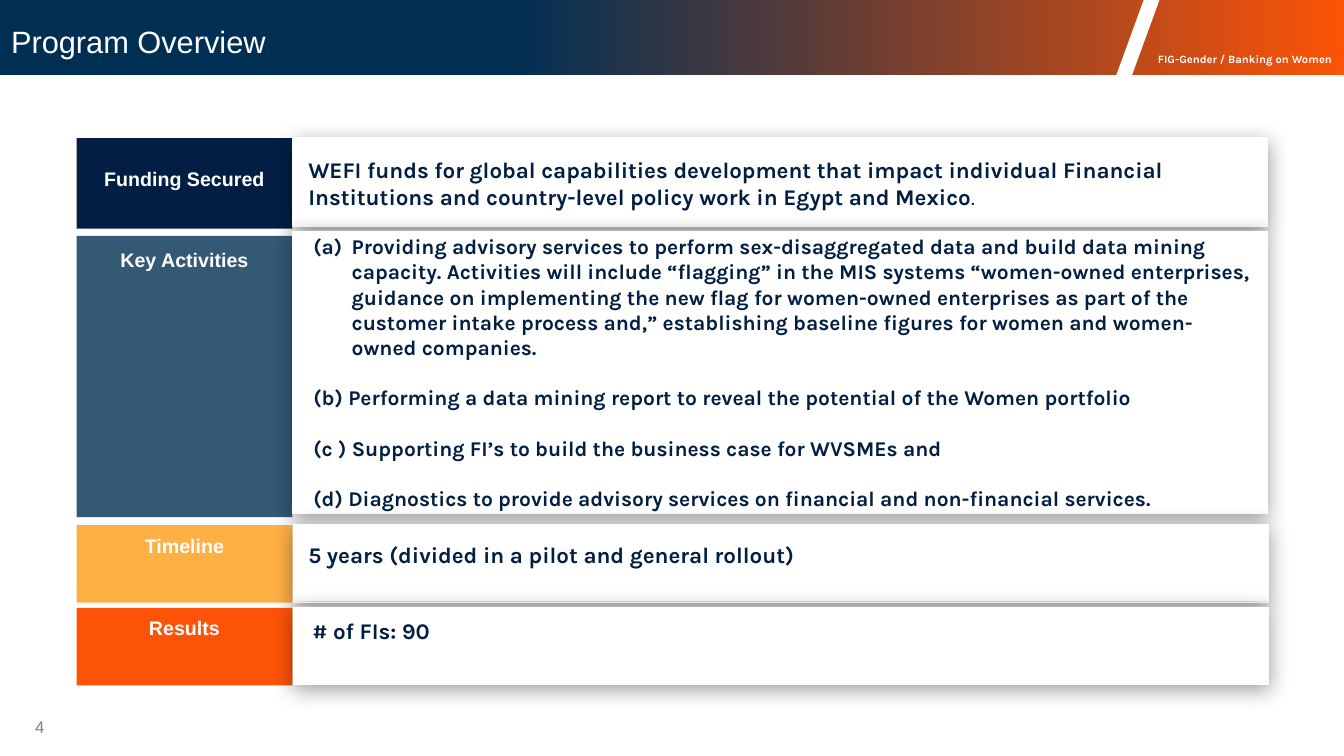
from dataclasses import dataclass

from lxml import etree
from pptx import Presentation
from pptx.dml.color import RGBColor
from pptx.enum.shapes import MSO_SHAPE
from pptx.enum.text import MSO_ANCHOR, PP_ALIGN
from pptx.oxml.ns import qn
from pptx.util import Pt

RECT = MSO_SHAPE.RECTANGLE
PLATE = MSO_SHAPE.PENTAGON
SLANT = MSO_SHAPE.PARALLELOGRAM
LEFT, CENTER = PP_ALIGN.LEFT, PP_ALIGN.CENTER
TOP, MIDDLE = MSO_ANCHOR.TOP, MSO_ANCHOR.MIDDLE
TITLE_ONLY = 5
EMU_PER_PX = 9144


@dataclass(frozen=True)
class Theme:
    white: str = "FFFFFF"
    black: str = "000000"
    grey: str = "808080"
    header: str = "002F54"
    navy: str = "021F43"
    slate: str = "335975"
    amber: str = "FF9300"
    orange: str = "FC5307"
    sans: str = "Arial"
    karla: str = "Karla"
    title_size: int = 22
    body_size: int = 16
    list_size: int = 15
    label_size: int = 14
    number_size: int = 12
    stop_size: int = 11
    tag_size: int = 8


def px(n):
    return n * EMU_PER_PX


def sub(parent, tag, **attrs):
    el = etree.SubElement(parent, qn(tag))
    for name, value in attrs.items():
        el.set(name, str(value))
    return el


def add_text(p, text, font, size, color, bold=False):
    r = p.add_run()
    r.text = text
    r.font.name = font
    r.font.size = Pt(size)
    r.font.bold = bold
    r.font.color.rgb = RGBColor.from_string(color)


class Deck:
    def __init__(self, theme, width, height):
        self.theme = theme
        self.prs = Presentation()
        self.prs.slide_width = px(width)
        self.prs.slide_height = px(height)
        self.s = self.prs.slides.add_slide(self.prs.slide_layouts[TITLE_ONLY])

    def shape(self, kind, box, color, adj=None, alpha=None):
        sp = self.s.shapes.add_shape(kind, *map(px, box))
        sp.shadow.inherit = False
        sp.line.fill.background()
        sp.fill.solid()
        sp.fill.fore_color.rgb = RGBColor.from_string(color)
        if adj is not None:
            sp.adjustments[0] = adj
        if alpha is not None:
            clr = sp._element.spPr.find(".//" + qn("a:srgbClr"))
            sub(clr, "a:alpha", val=alpha * 1000)
        return sp

    def header(self, box):
        sp = self.shape(RECT, box, self.theme.header)
        sp.fill.gradient()
        sp.fill.gradient_angle = 0
        stops = ((0.38, self.theme.header), (1.0, self.theme.orange))
        for stop, (position, color) in zip(sp.fill.gradient_stops, stops):
            stop.position = position
            stop.color.rgb = RGBColor.from_string(color)

    def panel(self, box):
        sp = self.shape(PLATE, box, self.theme.white, adj=0)
        sp.line.color.rgb = RGBColor.from_string(self.theme.white)
        sp.line.width = Pt(0.25)
        effects = sp._element.spPr.find(qn("a:effectLst"))
        shadow = sub(effects, "a:outerShdw", blurRad=Pt(15), dist=Pt(3),
                     dir=90 * 60000, algn="t", rotWithShape=0)
        clr = sub(shadow, "a:srgbClr", val=self.theme.black)
        sub(clr, "a:alpha", val=40000)

    def title(self, box, text):
        sp = self.s.shapes.title
        sp.left, sp.top, sp.width, sp.height = map(px, box)
        sp._element.getparent().append(sp._element)
        tf = sp.text_frame
        tf.vertical_anchor = MIDDLE
        p = tf.paragraphs[0]
        p.alignment = LEFT
        add_text(p, text, self.theme.sans, self.theme.title_size, self.theme.white)

    def text(self, box, paragraphs, font, size, color, bold=True, align=LEFT,
             anchor=TOP, gap=0, numbered=False, inset=None):
        tf = self.s.shapes.add_textbox(*map(px, box)).text_frame
        tf.word_wrap = True
        tf.vertical_anchor = anchor
        if inset is not None:
            tf.margin_left = tf.margin_right = px(inset)
            tf.margin_top = tf.margin_bottom = px(inset)
        for i, text in enumerate(paragraphs):
            p = tf.add_paragraph() if i else tf.paragraphs[0]
            p.alignment = align
            if i and gap:
                p.space_before = Pt(gap)
            if numbered and i == 0:
                pPr = p._p.get_or_add_pPr()
                pPr.set("marL", str(px(38)))
                pPr.set("indent", str(px(-38)))
                sub(pPr, "a:buAutoNum", type="alphaLcParenBoth")
            add_text(p, text, font, size, color, bold)
        return tf

    def label(self, box, text):
        self.text(box, [text], self.theme.sans, self.theme.label_size,
                  self.theme.white, align=CENTER)

    def body(self, box, paragraphs, size, **options):
        return self.text(box, paragraphs, self.theme.karla, size,
                         self.theme.navy, **options)


def main():
    theme = Theme()
    deck = Deck(theme, 1333, 750)
    deck.header((0, 0, 1333, 74))
    deck.text((1137, 47, 196, 24), ["FIG-Gender / Banking on Women"],
              theme.karla, theme.tag_size, theme.white, align=CENTER)
    deck.shape(SLANT, (1107, 0, 43, 75), theme.white, adj=0.636)
    deck.text((16, 701, 47, 40), ["4"], theme.sans, theme.number_size, theme.grey,
              bold=False, align=CENTER, anchor=MIDDLE, inset=0)
    deck.title((1, 8, 1333, 66), "Program Overview")

    funding = ["WEFI funds for global capabilities development that impact individual "
               "Financial Institutions and country-level policy work in Egypt and Mexico"]
    activities = [
        "Providing advisory services to perform sex-disaggregated data and build data "
        "mining capacity. Activities will include “flagging” in the MIS systems "
        "“women-owned enterprises, guidance on implementing the new flag for "
        "women-owned enterprises as part of the customer intake process and,” "
        "establishing baseline figures for women and women-owned companies.",
        "(b) Performing a data mining report to reveal the potential of the Women portfolio",
        "(c ) Supporting FI’s to build the business case for WVSMEs and",
        "(d) Diagnostics to provide advisory services on financial and "
        "non-financial services.",
    ]
    timeline = ["5 years (divided in a pilot and general rollout)"]
    results = ["# of FIs: 90"]
    big = theme.body_size
    listing = {"gap": 18, "numbered": True}
    rows = [
        ("Funding Secured", theme.navy, None, (137, 90), (290, 136, 88), 161,
         (296, 150, 64), funding, big, {}),
        ("Key Activities", theme.slate, None, (234, 279), (290, 229, 280), 241,
         (301, 227, 308), activities, theme.list_size, listing),
        ("Timeline", theme.amber, 73, (521, 77), (291, 520, 77), 525,
         (296, 532, 37), timeline, big, {}),
        ("Results", theme.orange, None, (603, 77), (291, 602, 77), 606,
         (300, 607, 64), results, big, {}),
    ]
    frames = {}
    for (name, color, alpha, (bar_y, bar_h), (panel_x, panel_y, panel_h), label_y,
         (text_x, text_y, text_h), paragraphs, size, options) in rows:
        deck.shape(RECT, (76, bar_y, 214, bar_h), color, alpha=alpha)
        deck.panel((panel_x, panel_y, 967, panel_h))
        deck.label((76, label_y, 214, 34), name)
        frames[name] = deck.body((text_x, text_y, 956, text_h), paragraphs, size, **options)
    add_text(frames["Funding Secured"].paragraphs[0], ".", theme.karla,
             theme.stop_size, theme.navy, bold=True)

    deck.prs.save("out.pptx")


if __name__ == "__main__":
    main()
